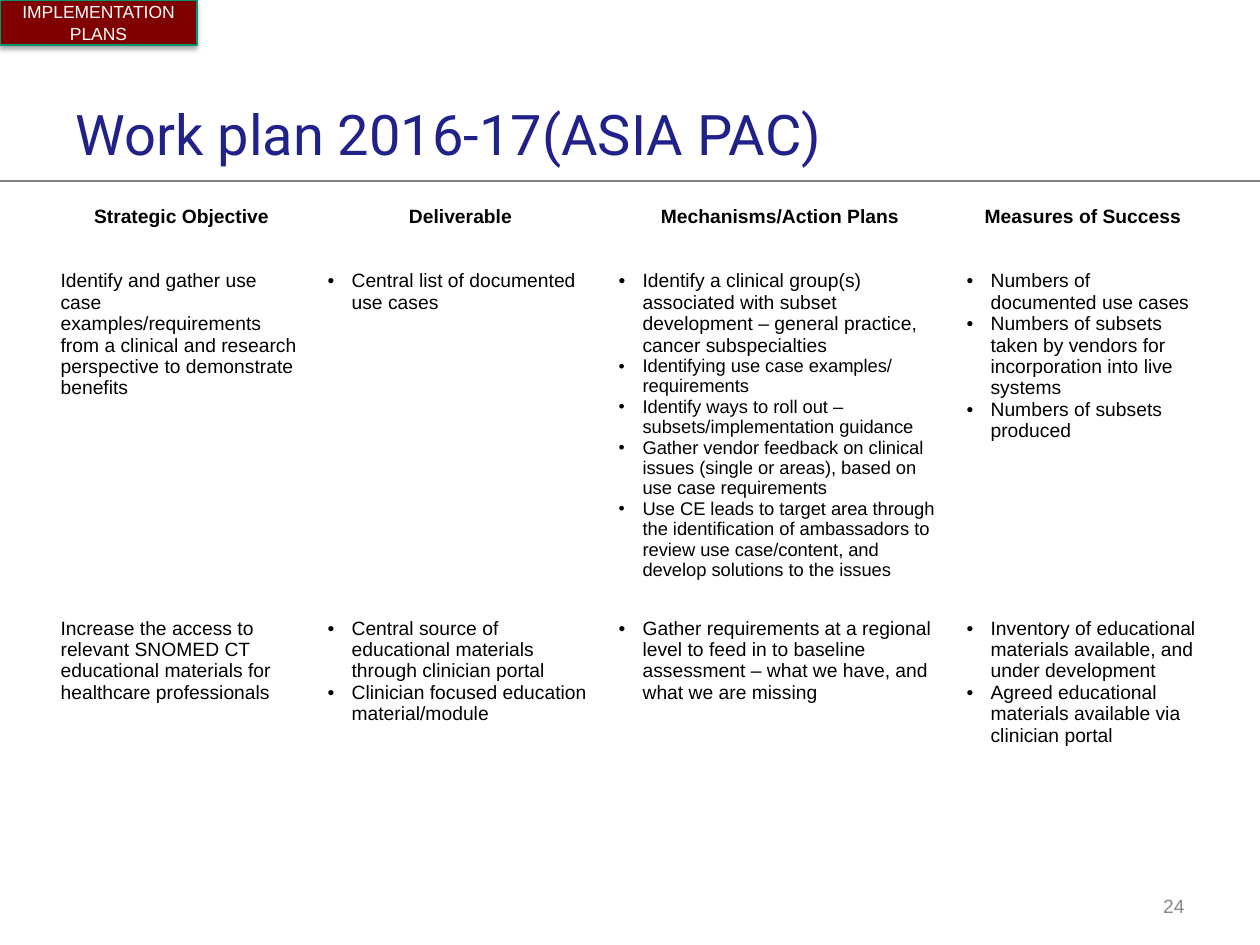
import collections
import pptx
import pptx.dml.color
import pptx.enum.shapes
import pptx.enum.text
import pptx.oxml
import pptx.oxml.ns
import pptx.util

COLOURS = {"title": "21218A", "text": "000000", "rule": "7F7F7F", "number": "888888",
           "label": "800000", "edge": "009870", "white": "FFFFFF"}
ALIGN = pptx.enum.text.PP_ALIGN
MIDDLE = pptx.enum.text.MSO_ANCHOR.MIDDLE
Item = collections.namedtuple("Item", "text level size bullet", defaults=(0, 11, True))


def plain(text):
    return [Item(text, bullet=False)]


def bullets(*texts, level=0, size=11):
    return [Item(text, level, size) for text in texts]


HEADINGS = ["Strategic Objective", "Deliverable", "Mechanisms/Action Plans", "Measures of Success"]
PLAN = [
    [plain("Identify and gather use case examples/requirements from a clinical and research "
           "perspective to demonstrate benefits"),
     bullets("Central list of documented use cases"),
     bullets("Identify a clinical group(s) associated with subset development – general practice, "
             "cancer subspecialties")
     + bullets("Identifying use case examples/ requirements",
               "Identify ways to roll out – subsets/implementation guidance",
               "Gather vendor feedback on clinical issues (single or areas), based on use case "
               "requirements",
               "Use CE leads to target area through the identification of ambassadors to review "
               "use case/content, and develop solutions to the issues", level=1, size=10.5),
     bullets("Numbers of documented use cases",
             "Numbers of subsets taken by vendors for incorporation into live systems",
             "Numbers of subsets produced")],
    [plain("Increase the access to relevant SNOMED CT educational materials for healthcare "
           "professionals"),
     bullets("Central source of educational materials through clinician portal",
             "Clinician focused education material/module", level=1),
     bullets("Gather requirements at a regional level to feed in to baseline assessment – what we "
             "have, and what we are missing"),
     bullets("Inventory of educational materials available, and under development",
             "Agreed educational materials available via clinician portal")],
]


class PageBuilder:
    """Holds the style and the current slide; lengths are px at 126 to the inch."""
    scale = 914400 / 126
    body_font = "Arial"
    title_font = "Roboto"
    indent = 24

    def __init__(self, deck):
        self.page = deck.slides.add_slide(deck.slide_layouts[5])

    @classmethod
    def px(cls, *lengths):
        return [pptx.util.Emu(round(length * cls.scale)) for length in lengths]

    @staticmethod
    def colour(name):
        return pptx.dml.color.RGBColor.from_string(COLOURS[name])

    @staticmethod
    def append_xml(parent, xml):
        names = pptx.oxml.ns.nsdecls("a")
        for child in list(pptx.oxml.parse_xml(f"<a:group {names}>{xml}</a:group>")):
            parent.append(child)

    def add_text(self, para, text, size, colour="text", font=None, bold=False, align=ALIGN.LEFT):
        para.alignment = align
        span = para.add_run()
        span.text = text
        span.font.name = font or self.body_font
        span.font.size = pptx.util.Pt(size)
        span.font.bold = bold
        span.font.color.rgb = self.colour(colour)

    def bullet(self, para, percent):
        properties = para._p.get_or_add_pPr()
        indent = self.px(self.indent)[0]
        properties.set("marL", str(indent))
        properties.set("indent", str(-indent))
        self.append_xml(properties,
                        f'<a:buClr><a:srgbClr val="{COLOURS["text"]}"/></a:buClr>'
                        f'<a:buSzPct val="{percent}000"/>'
                        f'<a:buFont typeface="{self.body_font}"/>'
                        '<a:buChar char="•"/>')

    def frame(self, shape):
        frame = shape.text_frame
        frame.word_wrap = True
        frame.vertical_anchor = MIDDLE
        return frame

    def title(self, text, *place):
        shape = self.page.shapes.title
        shape.left, shape.top, shape.width, shape.height = self.px(*place)
        frame = self.frame(shape)
        frame.auto_size = pptx.enum.text.MSO_AUTO_SIZE.NONE
        frame.margin_top = frame.margin_bottom = pptx.util.Inches(0.1)
        self.add_text(frame.paragraphs[0], text, 32, "title", self.title_font)

    def rule(self, *ends):
        line = self.page.shapes.add_connector(pptx.enum.shapes.MSO_CONNECTOR.STRAIGHT,
                                              *self.px(*ends))
        line.line.color.rgb = self.colour("rule")
        line.line.width = pptx.util.Pt(0.75)
        self.append_xml(line._element.spPr, "<a:effectLst/>")

    def number(self, text, *place):
        box = self.page.shapes.add_textbox(*self.px(*place))
        self.add_text(self.frame(box).paragraphs[0], text, 11, "number", align=ALIGN.RIGHT)

    def label(self, text, *place):
        box = self.page.shapes.add_shape(pptx.enum.shapes.MSO_SHAPE.RECTANGLE, *self.px(*place))
        box.fill.solid()
        box.fill.fore_color.rgb = self.colour("label")
        box.line.color.rgb = self.colour("edge")
        box.line.width = pptx.util.Pt(0.75)
        self.append_xml(box._element.spPr,
                        '<a:effectLst><a:outerShdw blurRad="39370" dist="22860" dir="5400000" '
                        'rotWithShape="0"><a:srgbClr val="000000"><a:alpha val="35000"/>'
                        '</a:srgbClr></a:outerShdw></a:effectLst>')
        self.add_text(self.frame(box).paragraphs[0], text, 10, "white", align=ALIGN.CENTER)

    def table(self, left, top, height, columns, rows):
        holder = self.page.shapes.add_table(len(rows), len(columns),
                                            *self.px(left, top, sum(columns), height))
        table = holder.table
        table.first_row = table.horz_banding = False
        for column, width in zip(table.columns, self.px(*columns)):
            column.width = width
        for row, length in zip(table.rows, self.px(*rows)):
            row.height = length
        holder.height = self.px(height)[0]
        for cell in table.iter_cells():
            cell.fill.background()
        return table

    def heading(self, cell, text):
        self.add_text(cell.text_frame.paragraphs[0], text, 11, bold=True, align=ALIGN.CENTER)

    def items(self, cell, items):
        frame = cell.text_frame
        for index, item in enumerate(items):
            para = frame.add_paragraph() if index else frame.paragraphs[0]
            para.level = item.level
            if item.bullet:
                self.bullet(para, 100 if item.size == 11 else 95)
            self.add_text(para, item.text, item.size)


def main():
    deck = pptx.Presentation()
    deck.slide_width, deck.slide_height = PageBuilder.px(1260, 945)
    builder = PageBuilder(deck)

    # Page furniture and title
    builder.rule(0, 181, 1260, 181)
    builder.number("24", 903, 886, 294, 40)
    builder.title("Work plan 2016-17(ASIA PAC)", 63, 98, 908, 71)

    # Work plan table; the rows grow with their text
    table = builder.table(48, 200, 563, [267, 291, 348, 258], [64, 125, 125])
    for column, text in enumerate(HEADINGS):
        builder.heading(table.cell(0, column), text)
    for row, cells in enumerate(PLAN, 1):
        for column, items in enumerate(cells):
            builder.items(table.cell(row, column), items)

    # Section label in the corner
    builder.label("IMPLEMENTATION PLANS", 0, 0, 197, 45)
    deck.save("out.pptx")


if __name__ == "__main__":
    main()
